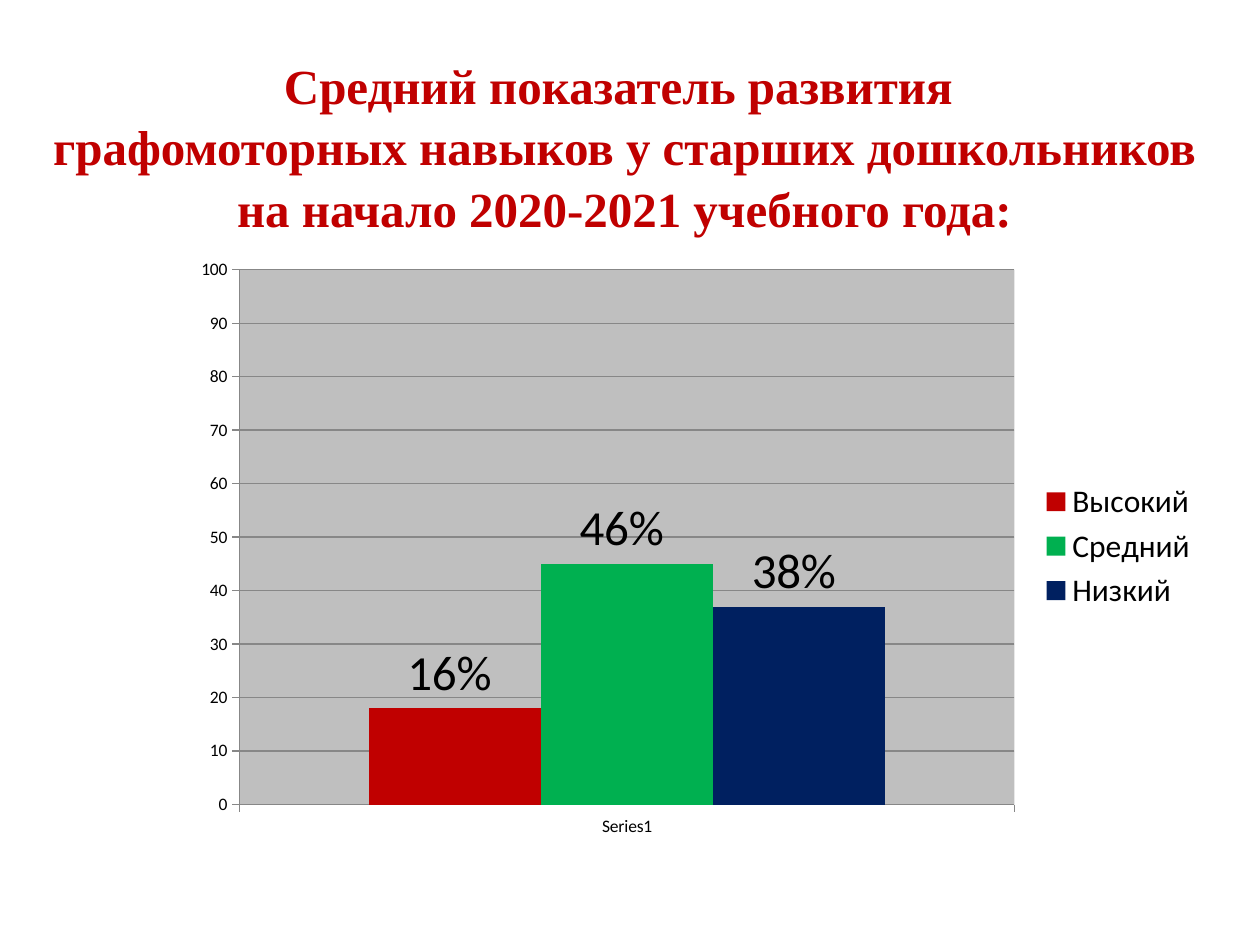
from lxml import etree
from pptx import Presentation
from pptx import util as u
from pptx.chart.data import CategoryChartData
from pptx.dml.color import RGBColor
from pptx.enum import chart as ch, text
from pptx.oxml import parse_xml
from pptx.oxml.ns import nsdecls, qn

COLORS = {"red": "C00000", "green": "00B050", "navy": "002060",
          "plot": "BFBFBF", "line": "878787", "text": "000000"}
TITLE = ["Средний показатель развития ",
         "графомоторных навыков у старших дошкольников "
         "на начало 2020-2021 учебного года:"]
TITLE_BOX = (0.23, 0.39, 9.45, 1.82)
CHART_BOX = (1.41, 1.95, 8.2, 4.77)
PLOT_AREA = {"x": 0.06, "y": 0.04, "w": 0.75, "h": 0.89}
CATEGORY = "Series1"
LEVELS = [  # name, value, label, colour
    ("Высокий", 18, "16% ", "red"),
    ("Средний", 45, "46% ", "green"),
    ("Низкий", 37, "38% ", "navy"),
]


def color(name):
    return RGBColor.from_string(COLORS[name])


def set_font(font, **values):
    for name, value in values.items():
        if name == "color":
            font.color.rgb = color(value)
        else:
            setattr(font, name, value)


def inches(box):
    return [u.Inches(length) for length in box]


def add_title(slide):
    frame = slide.shapes.add_textbox(*inches(TITLE_BOX)).text_frame
    frame.word_wrap = True
    frame.vertical_anchor = text.MSO_ANCHOR.MIDDLE
    frame.margin_bottom = u.Inches(0.35)
    for index, line in enumerate(TITLE):
        paragraph = frame.add_paragraph() if index else frame.paragraphs[0]
        paragraph.alignment = text.PP_ALIGN.CENTER
        paragraph.line_spacing = 1.05
        run = paragraph.add_run()
        run.text = line
        set_font(run.font, name="Times New Roman", size=u.Pt(28), bold=True, color="red")


def style_plot_area(chart):
    """Fix the inner plot rectangle and fill it."""
    area = chart._chartSpace.chart.plotArea
    for layout in area.findall(qn("c:layout")):
        area.remove(layout)
    values = {"layoutTarget": "inner", "xMode": "edge", "yMode": "edge", **PLOT_AREA}
    layout = parse_xml(f"<c:layout {nsdecls('c')}><c:manualLayout/></c:layout>")
    for name, value in values.items():
        etree.SubElement(layout[0], qn(f"c:{name}")).set("val", str(value))
    area.insert(0, layout)
    area.append(parse_xml(
        f"<c:spPr {nsdecls('c', 'a')}><a:solidFill>"
        f"<a:srgbClr val='{COLORS['plot']}'/></a:solidFill></c:spPr>"))


def add_levels_chart(slide):
    data = CategoryChartData()
    data.categories = [CATEGORY]
    for name, value, _, _ in LEVELS:
        data.add_series(name, [value])
    chart = slide.shapes.add_chart(
        ch.XL_CHART_TYPE.COLUMN_CLUSTERED, *inches(CHART_BOX), data).chart
    set_font(chart.font, name="Calibri", size=u.Pt(10), color="text")
    chart.has_title = False
    chart.has_legend = True
    chart.legend.position = ch.XL_LEGEND_POSITION.RIGHT
    chart.legend.include_in_layout = False
    set_font(chart.legend.font, size=u.Pt(18))

    plot = chart.plots[0]
    plot.vary_by_categories = False
    plot.gap_width, plot.overlap = 150, 0
    for series, (_, _, label, fill) in zip(plot.series, LEVELS):
        series.format.fill.solid()
        series.format.fill.fore_color.rgb = color(fill)
        set_font(series.data_labels.font, size=u.Pt(28))
        series.data_labels.show_value = True
        point_label = series.points[0].data_label
        run = point_label.text_frame.paragraphs[0].add_run()
        run.text = label
        set_font(run.font, size=u.Pt(28))
        point_label.position = ch.XL_LABEL_POSITION.OUTSIDE_END

    axis = chart.value_axis
    axis.minimum_scale, axis.maximum_scale, axis.major_unit = 0, 100, 10
    axis.has_major_gridlines = True
    for line in (axis.major_gridlines.format.line, axis.format.line,
                 chart.category_axis.format.line):
        line.color.rgb = color("line")
        line.width = u.Pt(0.75)
    style_plot_area(chart)


def main():
    presentation = Presentation()
    presentation.slide_width, presentation.slide_height = inches((10, 7.5))
    slide = presentation.slides.add_slide(presentation.slide_layouts[6])
    add_title(slide)
    add_levels_chart(slide)
    presentation.save("out.pptx")


if __name__ == "__main__":
    main()
